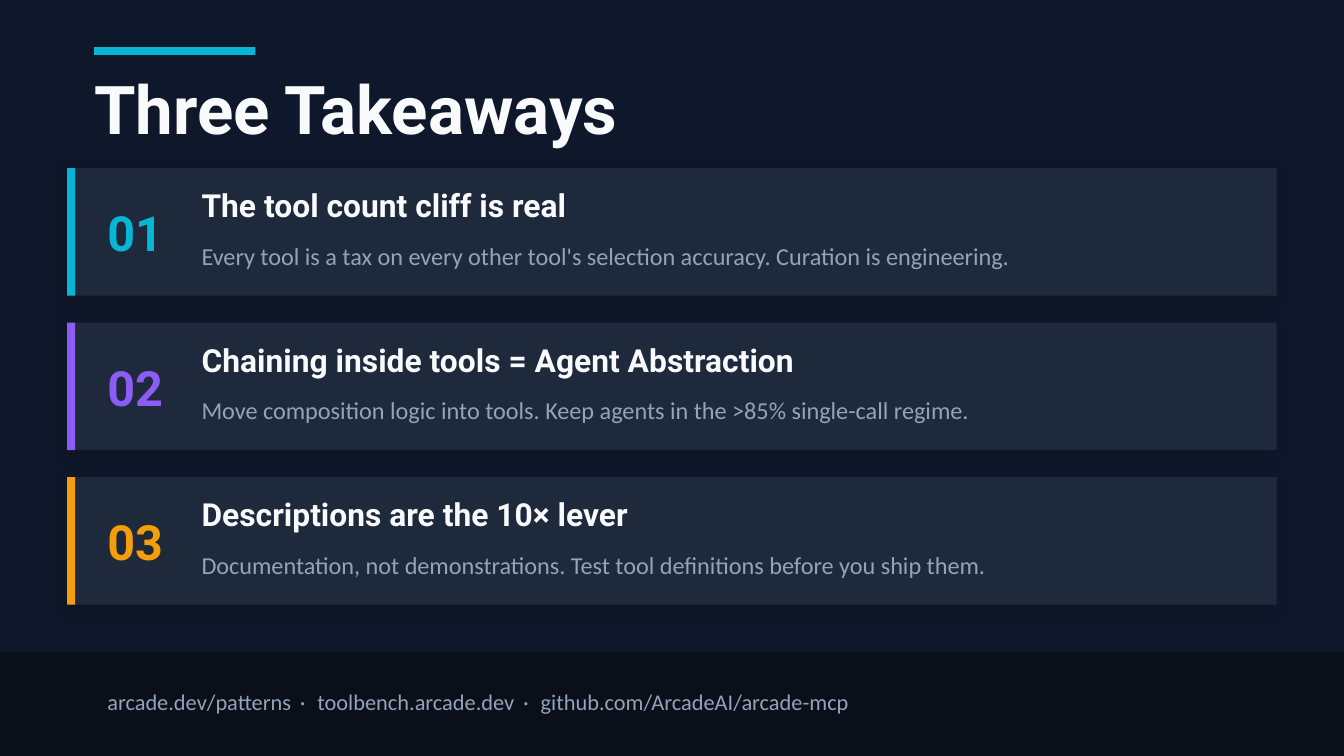
import lxml.etree
import pptx
import pptx.dml.color
import pptx.enum.shapes
import pptx.enum.text
import pptx.oxml
import pptx.oxml.ns
import pptx.util

Cm = pptx.util.Cm
Pt = pptx.util.Pt
WHITE, GREY, CYAN = "F8FAFC", "94A3B8", "06B6D4"
FORMATS = {
    "title": {"size": Pt(36), "name": "Roboto", "bold": True},
    "number": {"size": Pt(26), "name": "Roboto", "bold": True},
    "heading": {"size": Pt(17), "name": "Roboto", "bold": True},
    "detail": {"size": Pt(13), "name": "Calibri", "bold": False},
    "footer": {"size": Pt(12), "name": "Calibri", "bold": False},
}
CARD_SHADOW = (
    f'<a:effectLst {pptx.oxml.ns.nsdecls("a")}>'
    f'<a:outerShdw blurRad="{Pt(8)}" dist="{Pt(3)}" dir="{135 * 60000}" algn="bl" rotWithShape="0">'
    '<a:srgbClr val="000000"><a:alpha val="12000"/></a:srgbClr>'
    "</a:outerShdw></a:effectLst>"
)

deck = pptx.Presentation()
deck.slide_width, deck.slide_height = Cm(25.4), Cm(14.29)
slide = deck.slides.add_slide(deck.slide_layouts[6])
rgb = pptx.dml.color.RGBColor.from_string
slide.background.fill.solid()
slide.background.fill.fore_color.rgb = rgb("0F172A")


def add_bar(left, top, width, height, color):
    """Add a plain filled rectangle, with lengths in centimetres."""
    bar = slide.shapes.add_shape(
        pptx.enum.shapes.MSO_SHAPE.RECTANGLE, Cm(left), Cm(top), Cm(width), Cm(height))
    bar.shadow.inherit = False
    bar.fill.solid()
    bar.fill.fore_color.rgb = rgb(color)
    bar.line.fill.background()
    return bar


def add_text(left, top, width, height, texts, style, color, inset=0):
    """Add one paragraph with a span per text, with lengths in centimetres."""
    box = slide.shapes.add_textbox(Cm(left), Cm(top), Cm(width), Cm(height))
    frame = box.text_frame
    frame.word_wrap = True
    frame.vertical_anchor = pptx.enum.text.MSO_ANCHOR.MIDDLE
    for side in ("left", "top", "right", "bottom"):
        setattr(frame, f"margin_{side}", Cm(inset if side in ("left", "right") else inset / 2))
    para = frame.paragraphs[0]
    for text in texts:
        span = para.add_run()
        span.text = text
        for key, value in FORMATS[style].items():
            setattr(span.font, key, value)
        span.font.color.rgb = rgb(color)
    return para


add_bar(1.78, 0.89, 3.05, 0.15, CYAN)
add_text(1.78, 1.27, 22.86, 1.52, ["Three Takeaways"], "title", WHITE)

takeaways = [
    (CYAN, "The tool count cliff is real",
     "Every tool is a tax on every other tool's selection accuracy. Curation is engineering."),
    ("8B5CF6", "Chaining inside tools = Agent Abstraction",
     "Move composition logic into tools. Keep agents in the >85% single-call regime."),
    ("F59E0B", "Descriptions are the 10× lever",
     "Documentation, not demonstrations. Test tool definitions before you ship them."),
]
for index, (accent, heading, detail) in enumerate(takeaways):
    top = 3.18 + 2.92 * index
    card = add_bar(1.27, top, 22.86, 2.41, "1E293B")
    properties = card._element.spPr
    properties.replace(properties.find(pptx.oxml.ns.qn("a:effectLst")),
                       pptx.oxml.parse_xml(CARD_SHADOW))
    add_bar(1.27, top, 0.15, 2.41, accent)
    add_text(2.03, top + 0.2, 1.52, 2.03, [f"{index + 1:02d}"], "number", accent)
    add_text(3.81, top + 0.25, 19.05, 0.89, [heading], "heading", WHITE)
    add_text(3.81, top + 1.14, 19.05, 1.02, [detail], "detail", GREY)

add_bar(0, 12.32, 25.4, 1.97, "0A0F1A")
separator = " · "
links = ["arcade.dev/patterns", separator, "toolbench.arcade.dev", separator,
         "github.com/ArcadeAI/arcade-mcp"]
footer = add_text(1.78, 12.57, 21.84, 1.4, links, "footer", GREY, inset=0.25)
for span in footer.runs:
    if span.text == separator:
        span.font._element.set("spc", "180")  # widen the gaps around the dot

deck.save("out.pptx")
